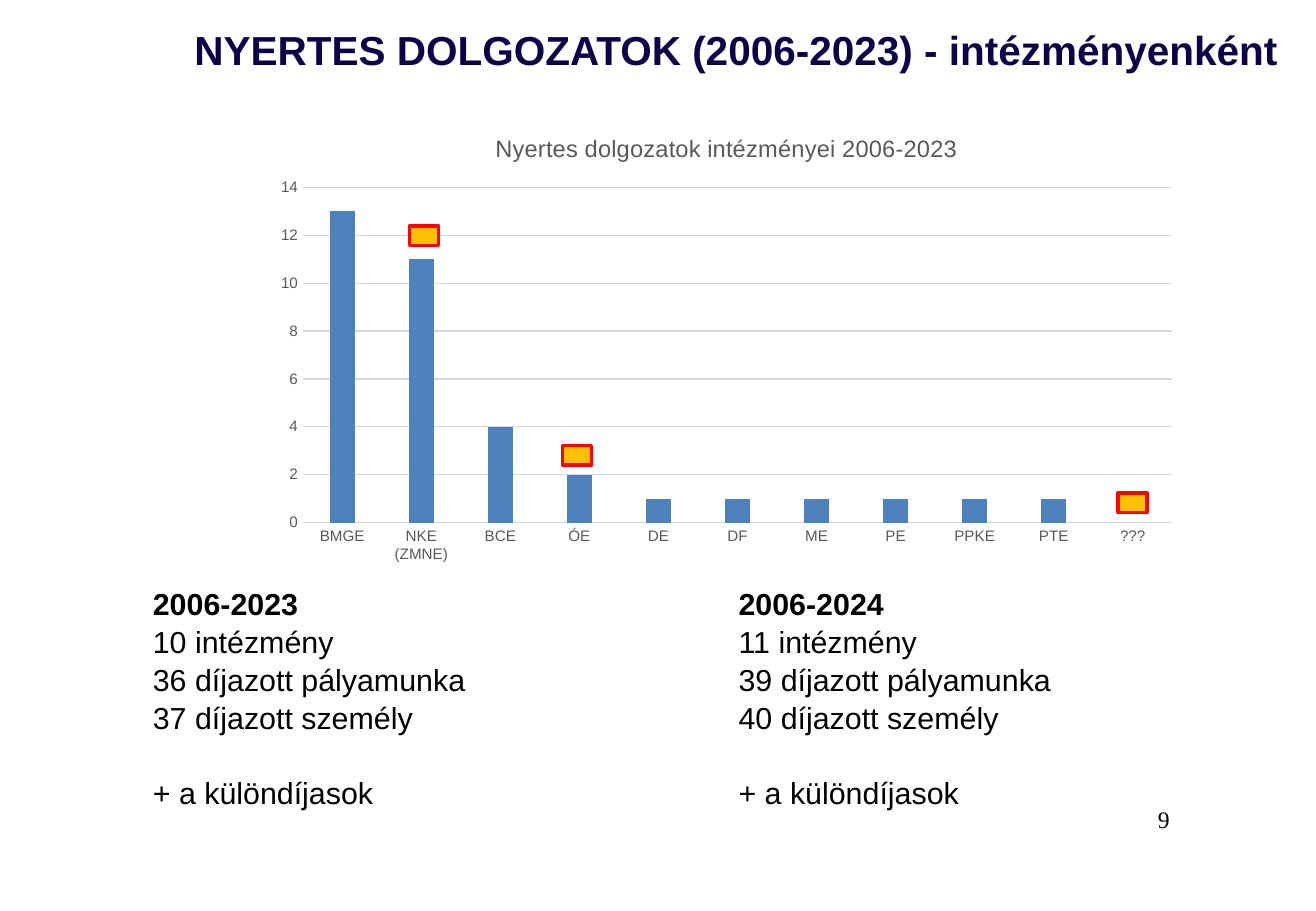
from pptx import Presentation
from pptx.chart.data import CategoryChartData
from pptx.dml.color import RGBColor
from pptx.enum.chart import XL_CHART_TYPE, XL_TICK_MARK
from pptx.enum.shapes import MSO_SHAPE
from pptx.enum.text import MSO_ANCHOR, PP_ALIGN
from pptx.util import Inches, Pt

TITLE = "NYERTES DOLGOZATOK (2006-2023) - intézményenként"
CHART_TITLE = "Nyertes dolgozatok intézményei 2006-2023"
WINNERS = {
    "BMGE": 13, "NKE (ZMNE)": 11, "BCE": 4, "ÓE": 2, "DE": 1, "DF": 1,
    "ME": 1, "PE": 1, "PPKE": 1, "PTE": 1, "???": None,
}
SUMMARIES = [
    (1.16, ["2006-2023", "10 intézmény", "36 díjazott pályamunka",
            "37 díjazott személy", "+ a különdíjasok"]),
    (5.98, ["2006-2024", "11 intézmény", "39 díjazott pályamunka",
            "40 díjazott személy", "+ a különdíjasok"]),
]
NEW_WINNER_MARKERS = [(3.37, 1.86), (4.63, 3.67), (9.2, 4.06)]
PAGE_NUMBER = "9"
GREY, GRID = "595959", "D9D9D9"


def color(hex_string):
    return RGBColor.from_string(hex_string)


def box(left, top, width, height):
    return [Inches(value) for value in (left, top, width, height)]


def set_font(font, size, hex_string="000000", name="Arial", bold=False):
    font.size = Pt(size)
    font.name = name
    font.bold = bold
    font.color.rgb = color(hex_string)


def set_line(line, hex_string, width):
    line.color.rgb = color(hex_string)
    line.width = Pt(width)


def add_title(slide):
    title = slide.shapes.title
    title.left, title.top, title.width, title.height = box(1.5, 0.07, 9.33, 0.67)
    title.text_frame.text = TITLE
    title.text_frame.vertical_anchor = MSO_ANCHOR.MIDDLE
    paragraph = title.text_frame.paragraphs[0]
    paragraph.alignment = PP_ALIGN.LEFT
    set_font(paragraph.font, 24, "0D0147", bold=True)


def add_winner_chart(slide):
    data = CategoryChartData()
    data.categories = list(WINNERS)
    data.add_series("Nyertes dolgozatok", list(WINNERS.values()))
    chart = slide.shapes.add_chart(
        XL_CHART_TYPE.COLUMN_CLUSTERED, *box(2.16, 0.93, 7.64, 3.78), data).chart
    set_font(chart.font, 10)
    chart.has_legend = False
    chart.has_title = True
    chart.chart_title.include_in_layout = False
    chart.chart_title.text_frame.text = CHART_TITLE
    set_font(chart.chart_title.text_frame.paragraphs[0].font, 14, GREY)

    for axis in (chart.category_axis, chart.value_axis):
        axis.major_tick_mark = axis.minor_tick_mark = XL_TICK_MARK.NONE
        set_font(axis.tick_labels.font, 9, GREY)
    set_line(chart.category_axis.format.line, GRID, 0.75)
    chart.value_axis.format.line.fill.background()
    chart.value_axis.minimum_scale = 0
    chart.value_axis.maximum_scale = 14
    chart.value_axis.major_unit = 2
    set_line(chart.value_axis.major_gridlines.format.line, GRID, 0.75)

    plot = chart.plots[0]
    plot.gap_width = 219
    plot.overlap = -27
    plot.vary_by_categories = False
    fill = plot.series[0].format.fill
    fill.solid()
    fill.fore_color.rgb = color("4F81BD")


def add_summary(slide, left, lines):
    frame = slide.shapes.add_textbox(*box(left, 4.75, 2.8, 1.92)).text_frame
    frame.word_wrap = False
    frame.text = "\n".join(lines)
    for paragraph in frame.paragraphs:
        paragraph.line_spacing = 1.05
        set_font(paragraph.font, 18)
    frame.paragraphs[0].font.bold = True
    frame.paragraphs[-1].space_before = Pt(21.5)


def add_marker(slide, left, top):
    marker = slide.shapes.add_shape(MSO_SHAPE.RECTANGLE, *box(left, top, 0.24, 0.16))
    marker.shadow.inherit = False
    marker.fill.solid()
    marker.fill.fore_color.rgb = color("FFC000")
    set_line(marker.line, "FF0000", 2)


def add_page_number(slide):
    frame = slide.shapes.add_textbox(*box(9.43, 6.58, 0.77, 0.54)).text_frame
    frame.word_wrap = True
    frame.text = PAGE_NUMBER
    set_font(frame.paragraphs[0].font, 14, name="Times New Roman")


def main():
    presentation = Presentation()
    presentation.slide_width = Inches(10.83)
    presentation.slide_height = Inches(7.5)
    slide = presentation.slides.add_slide(presentation.slide_layouts[5])
    add_title(slide)
    add_winner_chart(slide)
    add_page_number(slide)
    for left, lines in SUMMARIES:
        add_summary(slide, left, lines)
    for left, top in NEW_WINNER_MARKERS:
        add_marker(slide, left, top)
    presentation.save("out.pptx")


if __name__ == "__main__":
    main()
